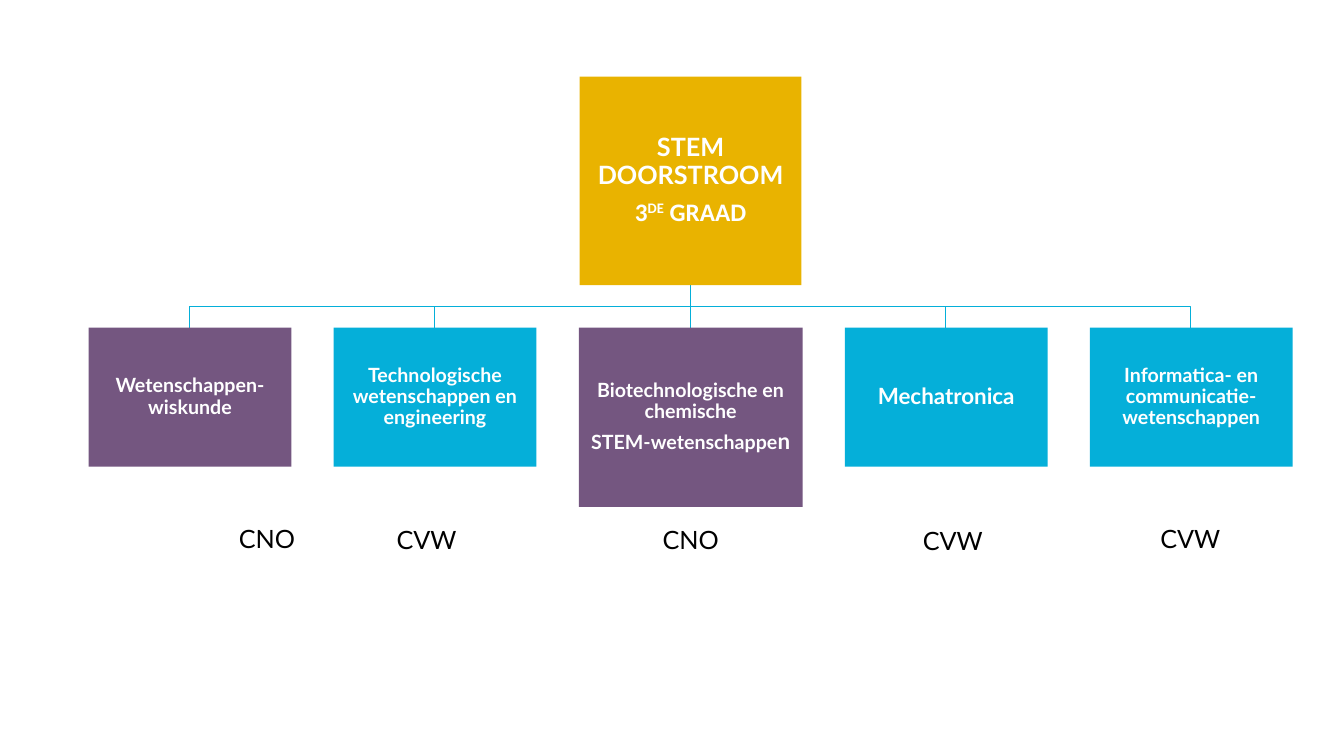
from dataclasses import dataclass

from lxml.etree import SubElement
from pptx import Presentation
from pptx.dml.color import RGBColor
from pptx.enum.shapes import MSO_CONNECTOR, MSO_SHAPE
from pptx.enum.text import MSO_ANCHOR, PP_ALIGN
from pptx.oxml.ns import qn
from pptx.util import Inches, Pt


@dataclass(frozen=True)
class Theme:
    """Colours, fonts and type sizes of the slide."""
    gold: RGBColor = RGBColor(0xE9, 0xB3, 0x00)
    purple: RGBColor = RGBColor(0x74, 0x56, 0x80)
    blue: RGBColor = RGBColor(0x05, 0xAF, 0xD9)
    white: RGBColor = RGBColor(0xFF, 0xFF, 0xFF)
    black: RGBColor = RGBColor(0, 0, 0)
    font: str = "Lato"
    alt_font: str = "Calibri"
    large: int = 18
    medium: int = 16
    small: int = 14


T = Theme()
GAP = 0.42
ROOT = (5.75, 0.76, 2.2, 2.07)
ROOT_TEXT = [
    [("STEM DOORSTROOM", T.large, T.font, 0)],
    [("3", T.large, T.alt_font, 0), ("DE", T.large, T.alt_font, 30000),
     (" GRAAD", T.large, T.alt_font, 0)],
]
BRANCHES = [
    (2.01, 1.38, T.purple, [[("Wetenschappen-wiskunde", T.small, T.font, 0)]]),
    (2.01, 1.38, T.blue,
     [[("Technologische wetenschappen en engineering", T.small, T.font, 0)]]),
    (2.22, 1.78, T.purple,
     [[("Biotechnologische en chemische", T.small, T.font, 0)],
      [("STEM-wetenschappe", T.small, T.font, 0), ("n", T.medium, T.font, 0)]]),
    (2.01, 1.38, T.blue, [[("Mechatronica", T.medium, T.font, 0)]]),
    (2.01, 1.38, T.blue,
     [[("Informatica- en communicatie-wetenschappen", T.small, T.font, 0)]]),
]
TAGS = [
    ("CNO", (2.27, 5.14, 1.12, 0.4), PP_ALIGN.LEFT, True),
    ("CVW", (3.79, 5.15, 0.88, 0.4), PP_ALIGN.CENTER, True),
    ("CNO", (6.05, 5.15, 1.6, 0.4), PP_ALIGN.CENTER, True),
    ("CVW", (9.03, 5.16, 0.84, 0.4), PP_ALIGN.CENTER, False),
    ("CVW", (11.41, 5.14, 0.84, 0.4), PP_ALIGN.LEFT, False),
]


def style_run(r, size, font, color, bold=False):
    """Set the type of one run."""
    r.font.size = Pt(size)
    r.font.name = font
    r.font.bold = bold
    r.font.color.rgb = color


def add_node(s, box, fill, paragraphs):
    """Draw a filled box with centred white text."""
    sp = s.shapes.add_shape(MSO_SHAPE.RECTANGLE, *map(Inches, box))
    sp.shadow.inherit = False
    sp.fill.solid()
    sp.fill.fore_color.rgb = fill
    sp.line.fill.background()
    tf = sp.text_frame
    tf.word_wrap = True
    tf.vertical_anchor = MSO_ANCHOR.MIDDLE
    tf.margin_left = tf.margin_right = tf.margin_top = tf.margin_bottom = Inches(0.01)
    for i, runs in enumerate(paragraphs):
        p = tf.add_paragraph() if i else tf.paragraphs[0]
        p.alignment = PP_ALIGN.CENTER
        p.line_spacing = 0.9
        p.space_after = Pt(0.4 * runs[0][1])
        for text, size, font, baseline in runs:
            r = p.add_run()
            r.text = text
            style_run(r, size, font, T.white, True)
            if baseline:
                r.font._element.set("baseline", str(baseline))


def add_link(s, x1, y1, x2, y2):
    """Join two points with a straight or a stepped line."""
    if x1 == x2:
        sp = s.shapes.add_connector(MSO_CONNECTOR.STRAIGHT, *map(Inches, (x1, y1, x2, y2)))
        SubElement(sp._element.spPr, qn("a:effectLst"))
    else:
        mid = (y1 + y2) / 2
        fb = s.shapes.build_freeform(Inches(x1), Inches(y1))
        points = [(x1, mid), (x2, mid), (x2, y2)]
        fb.add_line_segments([(Inches(x), Inches(y)) for x, y in points], close=False)
        sp = fb.convert_to_shape()
        sp.shadow.inherit = False
        sp.fill.background()
    sp.line.color.rgb = T.blue
    sp.line.width = Pt(1)


def add_tree(s, left):
    """Draw the root, the row of branches and the lines between them."""
    x, y, w, h = ROOT
    centre, bottom = round(x + w / 2, 2), y + h
    top = bottom + GAP
    for width, height, fill, paragraphs in BRANCHES:
        add_link(s, centre, bottom, round(left + width / 2, 2), top)
        add_node(s, (left, top, width, height), fill, paragraphs)
        left += width + GAP
    add_node(s, ROOT, T.gold, ROOT_TEXT)


def add_tag(s, text, box, align, wrap):
    """Write one label under a branch."""
    tf = s.shapes.add_textbox(*map(Inches, box)).text_frame
    tf.word_wrap = wrap
    p = tf.paragraphs[0]
    p.text = text
    p.alignment = align
    style_run(p.runs[0], T.large, T.font, T.black)


def main():
    """Build and save the slide."""
    prs = Presentation()
    prs.slide_width, prs.slide_height = Inches(13.33), Inches(7.5)
    s = prs.slides.add_slide(prs.slide_layouts[6])
    add_tree(s, 0.88)
    for tag in TAGS:
        add_tag(s, *tag)
    prs.save("out.pptx")


if __name__ == "__main__":
    main()
